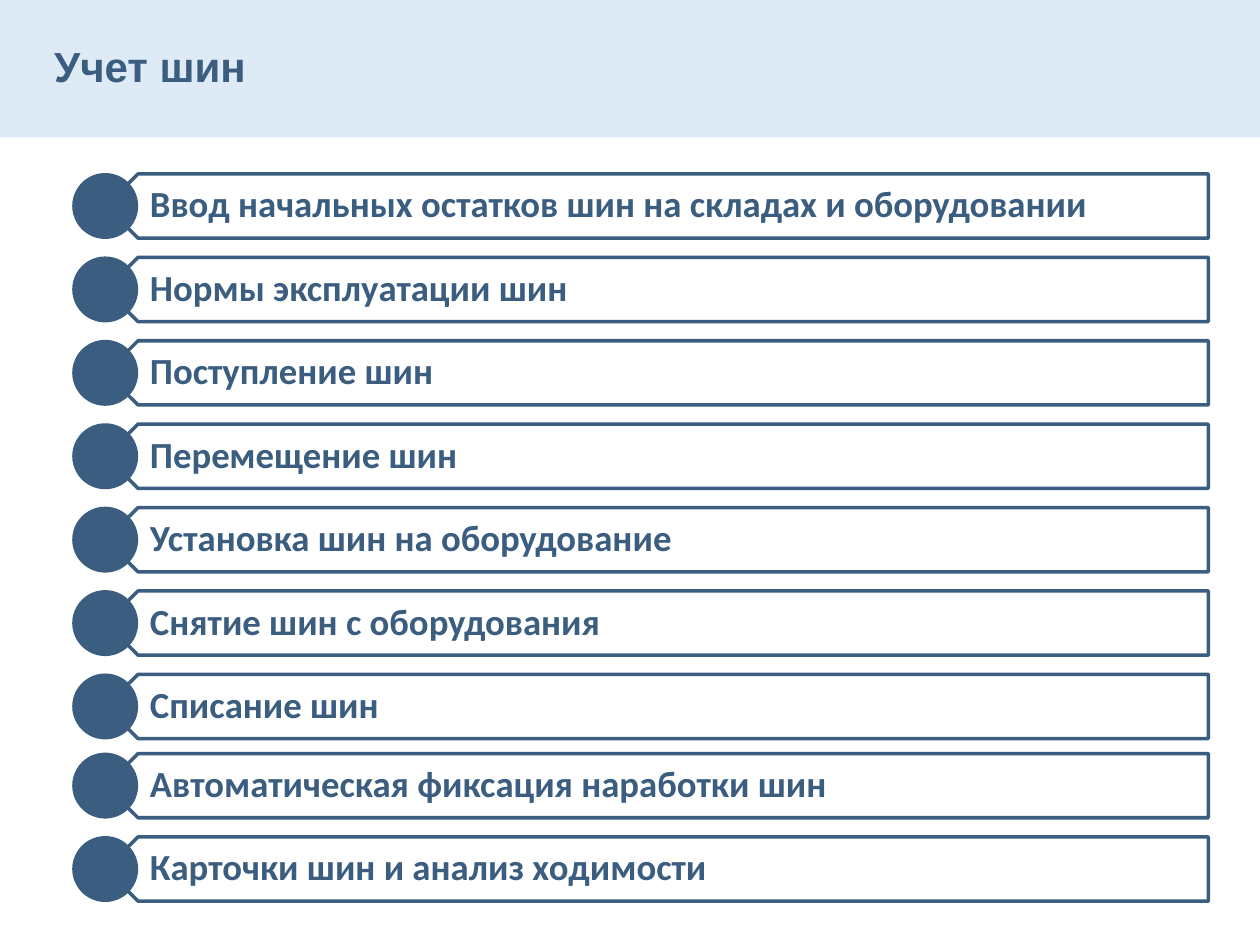
"""Build the tire accounting slide: a title band above two stacks of labelled plates."""
from pptx import Presentation
from pptx.dml.color import RGBColor
from pptx.enum.shapes import MSO_SHAPE
from pptx.enum.text import MSO_ANCHOR, PP_ALIGN
from pptx.util import Inches, Pt

TITLE = "Учет шин"
STACKS = [
    (1.38, [
        "Ввод начальных остатков шин на складах и оборудовании",
        "Нормы эксплуатации шин",
        "Поступление шин",
        "Перемещение шин",
        "Установка шин на оборудование",
        "Снятие шин с оборудования",
        "Списание шин",
    ]),
    (5.98, [
        "Автоматическая фиксация наработки шин",
        "Карточки шин и анализ ходимости",
    ]),
]

NAVY = RGBColor(0x3A, 0x5D, 0x80)
PALE = RGBColor(0xDE, 0xEB, 0xF7)
WHITE = RGBColor(0xFF, 0xFF, 0xFF)
RECT, PLATE, DOT = MSO_SHAPE.RECTANGLE, MSO_SHAPE.PENTAGON, MSO_SHAPE.OVAL
MIDDLE, LEFT = MSO_ANCHOR.MIDDLE, PP_ALIGN.LEFT

WIDE, HIGH = 10, 7.5
SIZE, PITCH = 0.51, 0.662
EDGE = 9.59
PLATE_X, TEXT_X, DOT_X = 0.84, 0.97, 0.58


def add_form(slide, kind, box, fill, line=0):
    form = slide.shapes.add_shape(kind, *map(Inches, box))
    form.shadow.inherit = False
    form.fill.solid()
    form.fill.fore_color.rgb = fill
    if line:
        form.line.color.rgb = NAVY
        form.line.width = Pt(line)
    else:
        form.line.fill.background()
    return form


def set_text(shape, text, font, size, pads):
    frame = shape.text_frame
    frame.text = text
    frame.word_wrap = True
    frame.vertical_anchor = MIDDLE
    (frame.margin_left, frame.margin_top,
     frame.margin_right, frame.margin_bottom) = map(Inches, pads)
    par = frame.paragraphs[0]
    par.alignment = LEFT
    par.line_spacing = 0.9
    face = par.runs[0].font
    face.name, face.size, face.bold = font, Pt(size), True
    face.color.rgb = NAVY


def add_row(slide, top, text):
    plate = add_form(slide, PLATE, (PLATE_X, top, EDGE - PLATE_X, SIZE), WHITE, 2)
    plate.rotation = 180
    label = slide.shapes.add_textbox(
        *map(Inches, (TEXT_X, top, EDGE - TEXT_X, SIZE)))
    set_text(label, text, "Calibri", 21, (0.22, 0.09, 0.16, 0.09))
    add_form(slide, DOT, (DOT_X, top, SIZE, SIZE), NAVY, 1)


def main():
    deck = Presentation()
    deck.slide_width, deck.slide_height = Inches(WIDE), Inches(HIGH)
    slide = deck.slides.add_slide(deck.slide_layouts[5])
    title = slide.shapes.title
    band = add_form(slide, RECT, (0, 0, WIDE, 1.09), PALE)
    title._element.addprevious(band._element)
    title.left, title.top, title.width, title.height = map(
        Inches, (0.33, 0.16, 6.06, 0.78))
    set_text(title, TITLE, "Arial", 24, (0.1, 0.05, 0.1, 0.05))
    for start, items in STACKS:
        for row, text in enumerate(items):
            add_row(slide, start + row * PITCH, text)
    deck.save("out.pptx")


if __name__ == "__main__":
    main()
